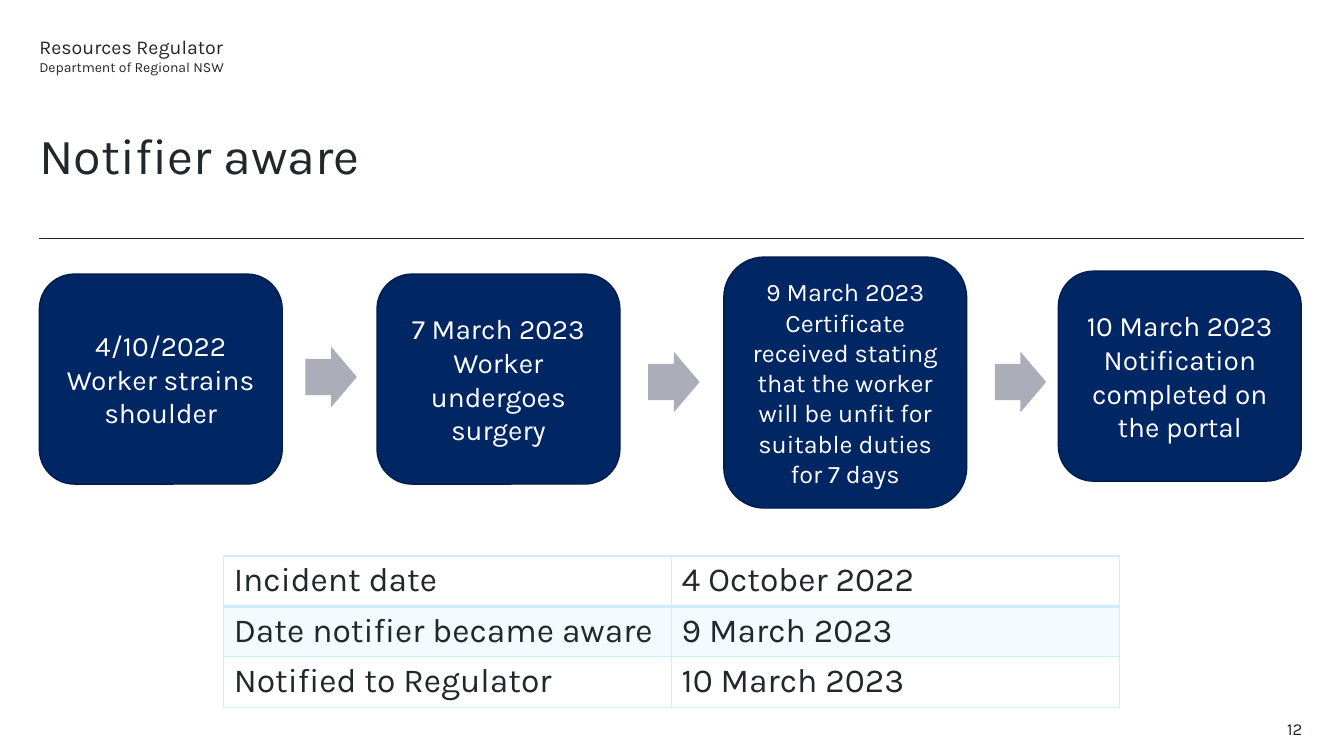
from lxml import etree
from pptx import Presentation
from pptx.dml.color import RGBColor
from pptx.enum import shapes, text
from pptx.oxml.ns import qn
from pptx.util import Pt

# Content
HEADER = [("Resources Regulator", "header"), ("Department of Regional NSW", "subheader")]
TITLE = "Notifier aware"
PAGE_NUMBER = "12"
STEPS = [  # left, top, height, text size, date, event
    (28.1, 195.8, 150, "step", "4/10/2022", "Worker strains shoulder"),
    (269.3, 195.8, 150, "step", "7 March 2023", "Worker undergoes surgery"),
    (517, 183.6, 179.3, "long_step", "9 March 2023",
     "Certificate received stating that the worker will be unfit "
     "for suitable duties for 7 days"),
    (756, 193.7, 150, "step", "10 March 2023", "Notification completed on the portal"),
]
ARROWS = [(218.2, 247.7), (463, 251.3), (710.6, 251.3)]  # left, top
DATES = [
    ("Incident date", "4 October 2022"),
    ("Date notifier became aware", "9 March 2023"),
    ("Notified to Regulator", "10 March 2023"),
]

THEME = {
    "font": "Karla",
    "colors": {"ink": "22272B", "navy": "002664", "outline": "001C4A",
               "white": "FFFFFF", "arrow": "ABADB8", "sky": "CBEDFD"},
    "sizes": {"header": 14, "subheader": 10, "title": 36, "page": 12,
              "step": 20, "long_step": 18, "table": 24},
}

# Layout
SLIDE_WIDTH, SLIDE_HEIGHT = 960, 540
MARGIN, RULE_RIGHT, RULE_TOP = 28.1, 931.7, 170
STEP_WIDTH = 173.5
ARROW_WIDTH, ARROW_HEIGHT = 36.7, 43.2
TABLE_LEFT, TABLE_TOP, COLUMN_WIDTH, ROW_HEIGHT = 159.8, 397.1, 320, 29.25


def color(name):
    return RGBColor.from_string(THEME["colors"][name])


def add_run(paragraph, words, size, ink="ink"):
    run = paragraph.add_run()
    run.text = words
    run.font.name = THEME["font"]
    run.font.size = Pt(THEME["sizes"][size])
    run.font.color.rgb = color(ink)


def add_text(slide, left, top, width, height, lines, insets=(0, 0, 0, 0)):
    frame = slide.shapes.add_textbox(Pt(left), Pt(top), Pt(width), Pt(height)).text_frame
    frame.word_wrap = True
    (frame.margin_left, frame.margin_top,
     frame.margin_right, frame.margin_bottom) = map(Pt, insets)
    for index, (words, size) in enumerate(lines):
        paragraph = frame.add_paragraph() if index else frame.paragraphs[0]
        add_run(paragraph, words, size)
    return frame


def add_filled_shape(slide, kind, left, top, width, height, fill):
    shape = slide.shapes.add_shape(kind, Pt(left), Pt(top), Pt(width), Pt(height))
    shape.shadow.inherit = False
    shape.fill.solid()
    shape.fill.fore_color.rgb = color(fill)
    return shape


def add_step(slide, left, top, height, size, date, event):
    shape = add_filled_shape(slide, shapes.MSO_SHAPE.ROUNDED_RECTANGLE,
                             left, top, STEP_WIDTH, height, "navy")
    shape.line.color.rgb = color("outline")
    shape.line.width = Pt(1)
    frame = shape.text_frame
    frame.word_wrap = True
    frame.vertical_anchor = text.MSO_ANCHOR.MIDDLE
    paragraph = frame.paragraphs[0]
    paragraph.alignment = text.PP_ALIGN.CENTER
    add_run(paragraph, date, size, "white")
    paragraph.add_line_break()
    add_run(paragraph, event, size, "white")


def add_arrow(slide, left, top):
    arrow = add_filled_shape(slide, shapes.MSO_SHAPE.RIGHT_ARROW,
                             left, top, ARROW_WIDTH, ARROW_HEIGHT, "arrow")
    arrow.line.fill.background()
    arrow.adjustments[0] = 0.6
    arrow.adjustments[1] = 0.5


def set_borders(cell, widths):
    properties = cell._tc.get_or_add_tcPr()
    for side, width in widths.items():
        border = etree.SubElement(properties, qn(f"a:ln{side}"), w=str(Pt(width)))
        fill = etree.SubElement(border, qn("a:solidFill"))
        etree.SubElement(fill, qn("a:srgbClr"), val=THEME["colors"]["sky"])


def tint_cell(cell):
    cell.fill.solid()
    cell.fill.fore_color.rgb = color("sky")
    swatch = cell._tc.tcPr.find(qn("a:solidFill")).find(qn("a:srgbClr"))
    etree.SubElement(swatch, qn("a:alpha"), val="20000")


def add_dates_table(slide):
    columns = len(DATES[0])
    table = slide.shapes.add_table(
        len(DATES), columns, Pt(TABLE_LEFT), Pt(TABLE_TOP),
        Pt(COLUMN_WIDTH * columns), Pt(ROW_HEIGHT * len(DATES))).table
    table.first_row = table.horz_banding = False
    for column in table.columns:
        column.width = Pt(COLUMN_WIDTH)
    for row_index, values in enumerate(DATES):
        table.rows[row_index].height = Pt(ROW_HEIGHT)
        for column_index, value in enumerate(values):
            cell = table.cell(row_index, column_index)
            add_run(cell.text_frame.paragraphs[0], value, "table")
            set_borders(cell, {"L": 1, "R": 1, "T": 2 if row_index == 1 else 1,
                               "B": 2 if row_index == 0 else 1})
            if row_index % 2:
                tint_cell(cell)
            else:
                cell.fill.background()


def main():
    presentation = Presentation()
    presentation.slide_width, presentation.slide_height = Pt(SLIDE_WIDTH), Pt(SLIDE_HEIGHT)
    slide = presentation.slides.add_slide(presentation.slide_layouts[6])

    # Rule below the title
    rule = slide.shapes.add_connector(shapes.MSO_CONNECTOR.STRAIGHT, Pt(MARGIN),
                                      Pt(RULE_TOP), Pt(RULE_RIGHT), Pt(RULE_TOP))
    rule.line.color.rgb = color("ink")
    rule.line.width = Pt(0.5)
    etree.SubElement(rule._element.spPr, qn("a:effectLst"))

    # Header, title and page number
    add_text(slide, MARGIN, 21.6, 765.4, 36, HEADER, (0, 3.6, 7.2, 3.6))
    title = add_text(slide, MARGIN, 93.6, 765.4, 62.6, [(TITLE, "title")])
    title.paragraphs[0].line_spacing = 0.9
    page = add_text(slide, 891.4, 513.4, 38.9, 14.4, [(PAGE_NUMBER, "page")])
    page.paragraphs[0].alignment = text.PP_ALIGN.RIGHT

    # Dates, then the timeline
    add_dates_table(slide)
    for step in STEPS:
        add_step(slide, *step)
    for arrow in ARROWS:
        add_arrow(slide, *arrow)

    presentation.save("out.pptx")


if __name__ == "__main__":
    main()
